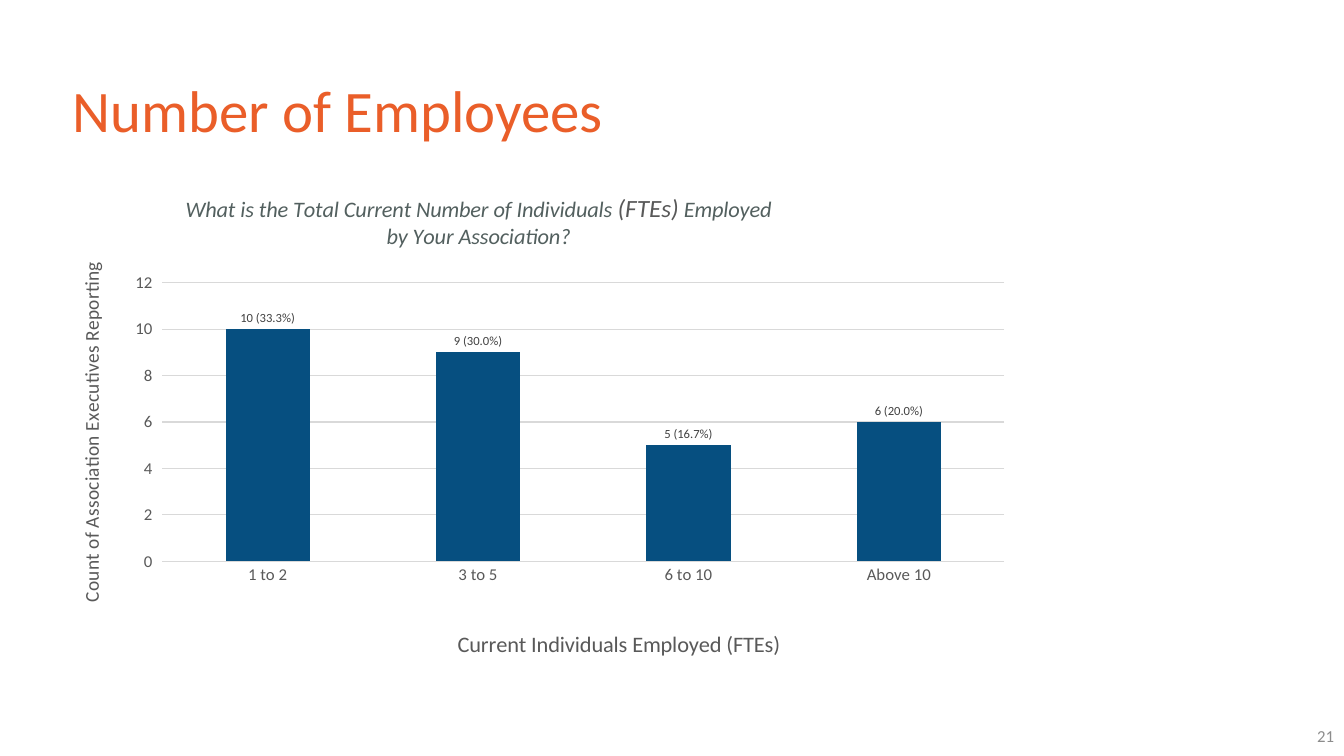
from pptx import Presentation
from pptx.chart.data import CategoryChartData
from pptx.dml.color import RGBColor
from pptx.enum.chart import XL_CHART_TYPE, XL_LABEL_POSITION, XL_TICK_MARK
from pptx.enum.text import MSO_ANCHOR, MSO_AUTO_SIZE, PP_ALIGN
from pptx.oxml import parse_xml
from pptx.oxml.ns import nsdecls
from pptx.util import Inches, Pt

HEADING = "Number of Employees"
PAGE_NUMBER = "21"
QUESTION = [
    [("What is the Total Current Number of Individuals ", 16, "question"),
     ("(FTEs)", 18, "axis"),
     (" Employed", 16, "question")],
    [("by Your Association?", 16, "question")],
]
EMPLOYED_TITLE = [[("Current Individuals Employed (FTEs)", 16, "axis")]]
COUNT_TITLE = [[("Count of Association Executives Reporting", 14, "axis")]]
SERIES_NAME = "Series 1"
RESPONSES = [
    ("1 to 2", 10, "10 (33.3%)"),
    ("3 to 5", 9, "9 (30.0%)"),
    ("6 to 10", 5, "5 (16.7%)"),
    ("Above 10", 6, "6 (20.0%)"),
]

COLORS = {
    "heading": "EA5E29", "page": "8C8C8C", "question": "53605F", "axis": "595959",
    "grid": "D9D9D9", "bar": "064F80", "label": "404040", "base": "000000",
}
FONT = "Calibri"
SLIDE_SIZE = (13.33, 7.5)
HEADING_BOX = (0.62, 0.4, 12.1, 1.45)
PAGE_BOX = (10.33, 7.1, 3, 0.4)
CHART_BOX = (0.62, 1.82, 9.53, 4.78)
# Shares of the chart's width and height
PLOT_AREA = {"x": 0.104, "y": 0.209, "w": 0.876, "h": 0.587}
QUESTION_SPOT = {"x": 0.125, "y": 0.012}
EMPLOYED_SPOT = {"x": 0.407, "y": 0.93}
COUNT_SPOT = {"x": 0.012, "y": 0.168}


def style(font, size, color, **extra):
    for name, value in {"name": FONT, "size": Pt(size), "bold": False, **extra}.items():
        setattr(font, name, value)
    font.color.rgb = RGBColor.from_string(COLORS[color])


def manual_layout(shares):
    """Build a c:layout element; a w and h make it an inner plot layout."""
    target = '<c:layoutTarget val="inner"/>' if "w" in shares else ""
    modes = "".join(f'<c:{key}Mode val="edge"/>' for key in ("x", "y"))
    values = "".join(f'<c:{key} val="{share}"/>' for key, share in shares.items())
    return parse_xml(f'<c:layout {nsdecls("c")}><c:manualLayout>{target}{modes}{values}'
                     '</c:manualLayout></c:layout>')


def drop_layout(element):
    for layout in element.xpath("./c:layout"):
        element.remove(layout)


def write_title(title, lines, spot, italic=False):
    frame = title.text_frame
    for index, line in enumerate(lines):
        paragraph = frame.add_paragraph() if index else frame.paragraphs[0]
        paragraph.alignment = PP_ALIGN.CENTER
        for text, size, color in line:
            run = paragraph.add_run()
            run.text = text
            style(run.font, size, color, italic=italic)
    drop_layout(title.element)
    title.element.xpath("./c:tx")[0].addnext(manual_layout(spot))


def grid_line(line):
    line.color.rgb = RGBColor.from_string(COLORS["grid"])
    line.width = Pt(0.75)


def add_heading(slide):
    heading = slide.shapes.title
    heading.left, heading.top, heading.width, heading.height = map(Inches, HEADING_BOX)
    frame = heading.text_frame
    frame.text = HEADING
    frame.auto_size = MSO_AUTO_SIZE.NONE
    frame.vertical_anchor = MSO_ANCHOR.MIDDLE
    paragraph = frame.paragraphs[0]
    paragraph.alignment = PP_ALIGN.LEFT
    paragraph.line_spacing = 0.9
    style(paragraph.runs[0].font, 42, "heading")


def add_page_number(slide):
    frame = slide.shapes.add_textbox(*map(Inches, PAGE_BOX)).text_frame
    frame.word_wrap = True
    frame.vertical_anchor = MSO_ANCHOR.MIDDLE
    frame.text = PAGE_NUMBER
    paragraph = frame.paragraphs[0]
    paragraph.alignment = PP_ALIGN.RIGHT
    style(paragraph.runs[0].font, 12, "page")


def add_employee_chart(slide):
    categories, counts, labels = zip(*RESPONSES)
    data = CategoryChartData()
    data.categories = categories
    data.add_series(SERIES_NAME, counts)
    chart = slide.shapes.add_chart(
        XL_CHART_TYPE.COLUMN_CLUSTERED, *map(Inches, CHART_BOX), data).chart
    style(chart.font, 10, "base")
    chart.has_legend = False
    chart.has_title = True
    write_title(chart.chart_title, QUESTION, QUESTION_SPOT, italic=True)

    plot_area = chart.element.xpath("./c:chart/c:plotArea")[0]
    drop_layout(plot_area)
    plot_area.insert(0, manual_layout(PLOT_AREA))

    employed, count = chart.category_axis, chart.value_axis
    for axis in (employed, count):
        style(axis.tick_labels.font, 12, "axis")
    write_title(employed.axis_title, EMPLOYED_TITLE, EMPLOYED_SPOT)
    employed.major_tick_mark = XL_TICK_MARK.NONE
    grid_line(employed.format.line)

    write_title(count.axis_title, COUNT_TITLE, COUNT_SPOT)
    body = count.axis_title.element.xpath(".//a:bodyPr")[0]
    body.set("rot", "-5400000")
    body.set("vert", "horz")
    for name, value in {"minimum_scale": 0, "maximum_scale": 12, "major_unit": 2}.items():
        setattr(count, name, value)
    count.major_tick_mark = XL_TICK_MARK.OUTSIDE
    count.format.line.fill.background()
    grid_line(count.major_gridlines.format.line)

    plot = chart.plots[0]
    plot.gap_width = 150
    plot.vary_by_categories = False
    bars = plot.series[0]
    bars.format.fill.solid()
    bars.format.fill.fore_color.rgb = RGBColor.from_string(COLORS["bar"])
    bars.data_labels.show_value = True
    bars.data_labels.position = XL_LABEL_POSITION.OUTSIDE_END
    style(bars.data_labels.font, 9, "label")
    for index, text in enumerate(labels):
        label = bars.points[index].data_label
        label.text_frame.text = text
        label.position = XL_LABEL_POSITION.OUTSIDE_END
        style(label.text_frame.paragraphs[0].runs[0].font, 9, "label")


def main():
    deck = Presentation()
    deck.slide_width, deck.slide_height = map(Inches, SLIDE_SIZE)
    slide = deck.slides.add_slide(deck.slide_layouts[5])
    add_heading(slide)
    add_page_number(slide)
    add_employee_chart(slide)
    deck.save("out.pptx")


if __name__ == "__main__":
    main()
